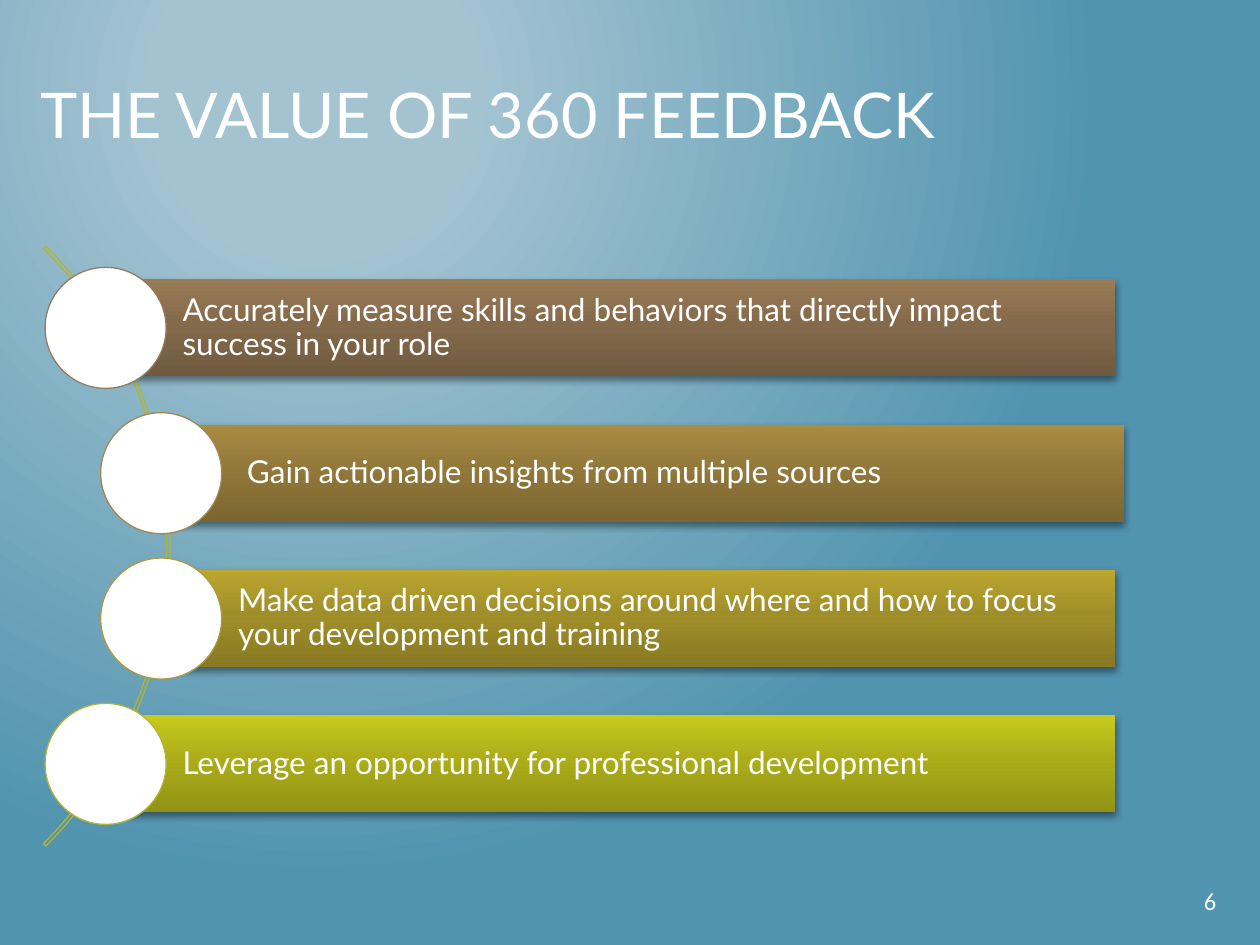
from lxml.etree import SubElement
from pptx import Presentation
from pptx.dml.color import RGBColor
from pptx.enum.shapes import MSO_SHAPE
from pptx.enum.text import MSO_ANCHOR, MSO_AUTO_SIZE, PP_ALIGN
from pptx.oxml.ns import qn
from pptx.util import Cm, Pt

THEME = {
    "white": "FFFFFF",
    "shadow": "000000",
    "arc": "B3B435",
    "background": [(20, "A3C3D1"), (100, "5194AF")],
    "title": Pt(36),
    "body": Pt(18),
    "number": Pt(14),
    "line": Pt(0.75),
    "heading_font": "Lato",
    "number_font": "Calibri",
}

BENEFITS = [
    ("Accurately measure skills and behaviors that directly impact success in your role",
     0.91, 2.13, 20.35, "927C61", ("705A40", "846A4B", "9A7C57")),
    ("Gain actionable insights from multiple sources",
     2.03, 3.43, 19.23, "9E8752", ("7C6631", "92783A", "AA8C43")),
    ("Make data driven decisions around where and how to focus your development and training",
     2.03, 3.25, 19.23, "A99A43", ("887923", "A08F29", "BAA630")),
    ("Leverage an opportunity for professional development",
     0.91, 2.13, 20.35, "B3B435", ("929315", "ACAD19", "C8CA1D")),
]
FIRST_TOP, ROW_STEP = 5.39, 2.93
CIRCLE_SIZE, BAR_HEIGHT = 2.44, 1.96


def set_gradient(fill, element, stops, direction, values):
    fill.gradient()
    gradient = next(element.iter(qn("a:gradFill")))
    gradient.clear()
    stop_list = SubElement(gradient, qn("a:gsLst"))
    for position, color in stops:
        stop = SubElement(stop_list, qn("a:gs"), pos=str(position * 1000))
        SubElement(stop, qn("a:srgbClr"), val=color)
    return SubElement(gradient, qn(direction), values)


def write_text(shape, text, font_name, size, frame_format, paragraph_format):
    text_frame = shape.text_frame
    text_frame.text = text
    for name, value in frame_format.items():
        setattr(text_frame, name, value)
    paragraph = text_frame.paragraphs[0]
    for name, value in paragraph_format.items():
        setattr(paragraph, name, value)
    font = paragraph.runs[0].font
    for name, value in {"name": font_name, "size": size, "bold": False}.items():
        setattr(font, name, value)
    font.color.rgb = RGBColor.from_string(THEME["white"])


presentation = Presentation()
presentation.slide_width = Cm(25.4)
presentation.slide_height = Cm(19.05)
slide = presentation.slides.add_slide(presentation.slide_layouts[5])

path_element = set_gradient(slide.background.fill, slide.element, THEME["background"],
                            "a:path", {"path": "circle"})
SubElement(path_element, qn("a:fillToRect"), l="50000", t="20000", r="100000", b="100000")

title = slide.shapes.title
title_place = {"left": Cm(0.56), "top": Cm(1.4), "width": Cm(19.13), "height": Cm(1.8)}
for name, value in title_place.items():
    setattr(title, name, value)
write_text(title, "THE VALUE OF 360 FEEDBACK", THEME["heading_font"], THEME["title"],
           {"word_wrap": False, "auto_size": MSO_AUTO_SIZE.SHAPE_TO_FIT_TEXT,
            "vertical_anchor": MSO_ANCHOR.TOP},
           {"alignment": PP_ALIGN.LEFT})

arc = slide.shapes.add_shape(MSO_SHAPE.BLOCK_ARC, Cm(-13.67), Cm(2.46), Cm(17.1), Cm(17.1))
for index, value in enumerate((189, 27, 0.004)):
    arc.adjustments[index] = value
arc.shadow.inherit = False
arc.fill.background()
arc.line.color.rgb = RGBColor.from_string(THEME["arc"])
arc.line.width = THEME["line"]

for row, (text, circle_left, bar_left, bar_width, line_color, colors) in enumerate(BENEFITS):
    circle_top = FIRST_TOP + row * ROW_STEP
    bar_top = circle_top + (CIRCLE_SIZE - BAR_HEIGHT) / 2

    bar = slide.shapes.add_shape(MSO_SHAPE.RECTANGLE, Cm(bar_left), Cm(bar_top),
                                 Cm(bar_width), Cm(BAR_HEIGHT))
    set_gradient(bar.fill, bar.element, zip((0, 55, 100), colors),
                 "a:lin", {"ang": "16200000", "scaled": "0"})
    bar.line.fill.background()
    bar.shadow.inherit = False
    effects = next(bar.element.iter(qn("a:effectLst")))
    shadow = SubElement(effects, qn("a:outerShdw"), blurRad=str(Pt(4)), dist=str(Pt(2)),
                        dir="5400000", rotWithShape="0")
    shadow_color = SubElement(shadow, qn("a:srgbClr"), val=THEME["shadow"])
    SubElement(shadow_color, qn("a:alpha"), val="44000")
    write_text(bar, text, THEME["heading_font"], THEME["body"],
               {"word_wrap": True, "vertical_anchor": MSO_ANCHOR.MIDDLE,
                "margin_left": Cm(1.55), "margin_right": Cm(0.13),
                "margin_top": Cm(0.13), "margin_bottom": Cm(0.13)},
               {"alignment": PP_ALIGN.LEFT, "line_spacing": 0.9})

    circle = slide.shapes.add_shape(MSO_SHAPE.OVAL, Cm(circle_left), Cm(circle_top),
                                    Cm(CIRCLE_SIZE), Cm(CIRCLE_SIZE))
    circle.shadow.inherit = False
    circle.fill.solid()
    circle.fill.fore_color.rgb = RGBColor.from_string(THEME["white"])
    circle.line.color.rgb = RGBColor.from_string(line_color)
    circle.line.width = THEME["line"]

slide_number = slide.shapes.add_textbox(Cm(19.69), Cm(17.65), Cm(5.08), Cm(1.02))
write_text(slide_number, "6", THEME["number_font"], THEME["number"],
           {"word_wrap": True, "vertical_anchor": MSO_ANCHOR.MIDDLE},
           {"alignment": PP_ALIGN.RIGHT})

presentation.save("out.pptx")
